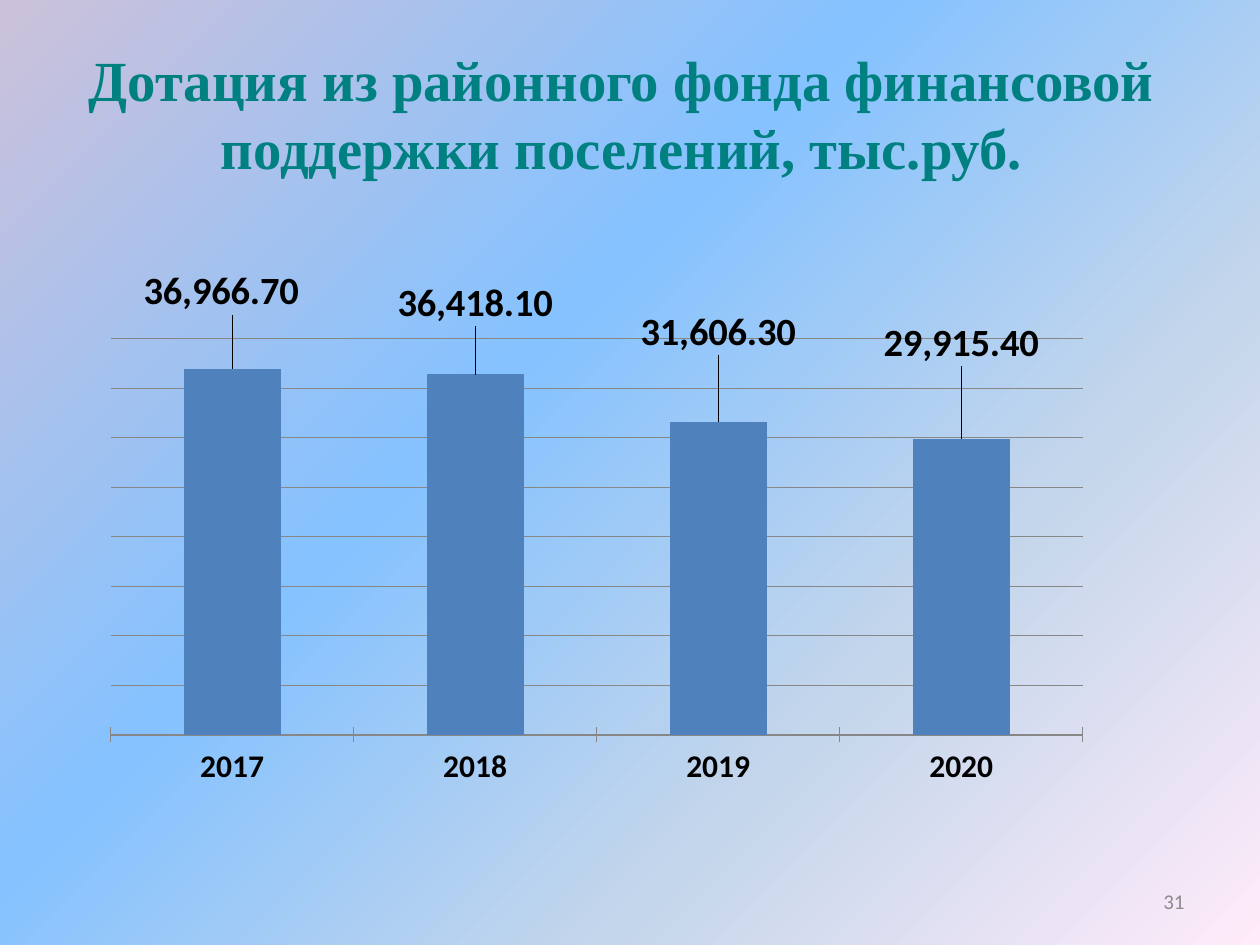
"""Build the slide on grants from the district fund for settlements."""
from dataclasses import dataclass

from lxml.etree import fromstring
from pptx import Presentation
from pptx.chart.data import CategoryChartData
from pptx.dml.color import RGBColor
from pptx.enum.chart import XL_CHART_TYPE, XL_LABEL_POSITION, XL_TICK_MARK
from pptx.enum.text import MSO_ANCHOR, PP_ALIGN
from pptx.oxml.ns import nsdecls
from pptx.util import Cm, Pt


@dataclass(frozen=True)
class Theme:
    """Hold the colours, fonts and type sizes."""
    serif: str = "Times New Roman"
    sans: str = "Calibri"
    teal: str = "008080"
    grey: str = "8C8C8C"
    grid: str = "878787"
    black: str = "000000"
    bar: str = "4F81BD"
    stops: tuple = ((0, "CCC1DA"), (40, "85C2FF"), (70, "C4D6EB"), (100, "FFEBFA"))
    head: float = 32.4
    label: float = 22
    year: float = 18
    base: float = 10
    page: float = 12


THEME = Theme()
GRANTS = {"2017": 36966.7, "2018": 36418.1, "2019": 31606.3, "2020": 29915.4}
SHIFTS = ((-0.01, -0.08), (0, -0.07), (0, -0.1), (0, -0.11))
FRAME = {"x": 0.03, "y": 0.2, "w": 0.89, "h": 0.65}


def style(font, size, tint, face=THEME.sans, bold=False):
    """Set face, size, colour and weight of a font."""
    font.name, font.size, font.bold = face, Pt(size), bold
    font.color.rgb = RGBColor.from_string(tint)


def paint(slide):
    """Fill the background with the slanted gradient."""
    fill = slide.background.fill
    fill.gradient()
    stops = "".join(
        f'<a:gs pos="{at * 1000}"><a:srgbClr val="{tint}"/></a:gs>'
        for at, tint in THEME.stops
    )
    grad = fromstring(
        f'<a:gradFill {nsdecls("a")} rotWithShape="1"><a:gsLst>{stops}</a:gsLst>'
        '<a:lin ang="2700000" scaled="0"/></a:gradFill>'
    )
    old = slide.background._cSld.xpath("./p:bg/p:bgPr/a:gradFill")[0]
    old.getparent().replace(old, grad)


def write(slide, text, box, align, **look):
    """Add a text box with one styled paragraph."""
    frame = slide.shapes.add_textbox(*map(Cm, box)).text_frame
    frame.word_wrap = True
    frame.vertical_anchor = MSO_ANCHOR.MIDDLE
    line = frame.paragraphs[0]
    line.text, line.alignment = text, align
    style(line.font, **look)


def layout(modes, **parts):
    """Make a manual chart layout element."""
    tags = "".join(f'<c:{key} val="{val}"/>' for key, val in parts.items())
    return fromstring(
        f'<c:layout {nsdecls("c")}><c:manualLayout>{modes}{tags}'
        "</c:manualLayout></c:layout>"
    )


def label(series):
    """Label each bar with its value, moved by its shift."""
    look = {"size": THEME.label, "tint": THEME.black, "bold": True}
    labels = series.data_labels
    labels.show_value = True
    style(labels.font, **look)
    for spot, (x, y) in enumerate(SHIFTS):
        tag = series.points[spot].data_label
        style(tag.font, **look)
        tag.position = XL_LABEL_POSITION.OUTSIDE_END
        node = series._element.xpath(f"c:dLbls/c:dLbl[c:idx/@val='{spot}']")[0]
        node.insert(1, layout("", x=x, y=y))


def scale(chart):
    """Set up the year axis and the hidden value axis with its grid."""
    years, sums = chart.category_axis, chart.value_axis
    style(years.tick_labels.font, THEME.year, THEME.black, bold=True)
    years.major_tick_mark = XL_TICK_MARK.CROSS
    sums.minimum_scale, sums.maximum_scale, sums.major_unit = 0, 40000, 5000
    sums.visible = False
    sums.has_major_gridlines = True
    for line in (years.format.line, sums.major_gridlines.format.line):
        line.color.rgb = RGBColor.from_string(THEME.grid)
        line.width = Pt(0.75)


def draw(slide, box):
    """Add the column chart of grants by year."""
    data = CategoryChartData(number_format="#,##0.00")
    data.categories = list(GRANTS)
    data.add_series("Series 1", list(GRANTS.values()))
    chart = slide.shapes.add_chart(
        XL_CHART_TYPE.COLUMN_CLUSTERED, *map(Cm, box), data
    ).chart
    chart.has_title = chart.has_legend = False
    style(chart.font, THEME.base, THEME.black)
    plot = chart.plots[0]
    plot.gap_width, plot.vary_by_categories = 150, False
    series = plot.series[0]
    series.format.fill.solid()
    series.format.fill.fore_color.rgb = RGBColor.from_string(THEME.bar)
    label(series)
    scale(chart)
    area = chart._chartSpace.xpath("c:chart/c:plotArea")[0]
    for old in area.xpath("c:layout"):
        area.remove(old)
    modes = (
        '<c:layoutTarget val="inner"/><c:xMode val="edge"/><c:yMode val="edge"/>'
    )
    area.insert(0, layout(modes, **FRAME))


def main():
    """Build and save the slide."""
    deck = Presentation()
    deck.slide_width, deck.slide_height = Cm(25.4), Cm(19.05)
    slide = deck.slides.add_slide(deck.slide_layouts[6])
    paint(slide)
    write(
        slide, "Дотация из районного фонда финансовой поддержки поселений, тыс.руб.",
        (0.58, 1.19, 23.9, 2.18), PP_ALIGN.CENTER,
        size=THEME.head, tint=THEME.teal, face=THEME.serif, bold=True,
    )
    write(
        slide, "31", (18.21, 17.65, 5.92, 1.02), PP_ALIGN.RIGHT,
        size=THEME.page, tint=THEME.grey,
    )
    draw(slide, (1.57, 4.37, 22.02, 12.29))
    deck.save("out.pptx")


if __name__ == "__main__":
    main()
